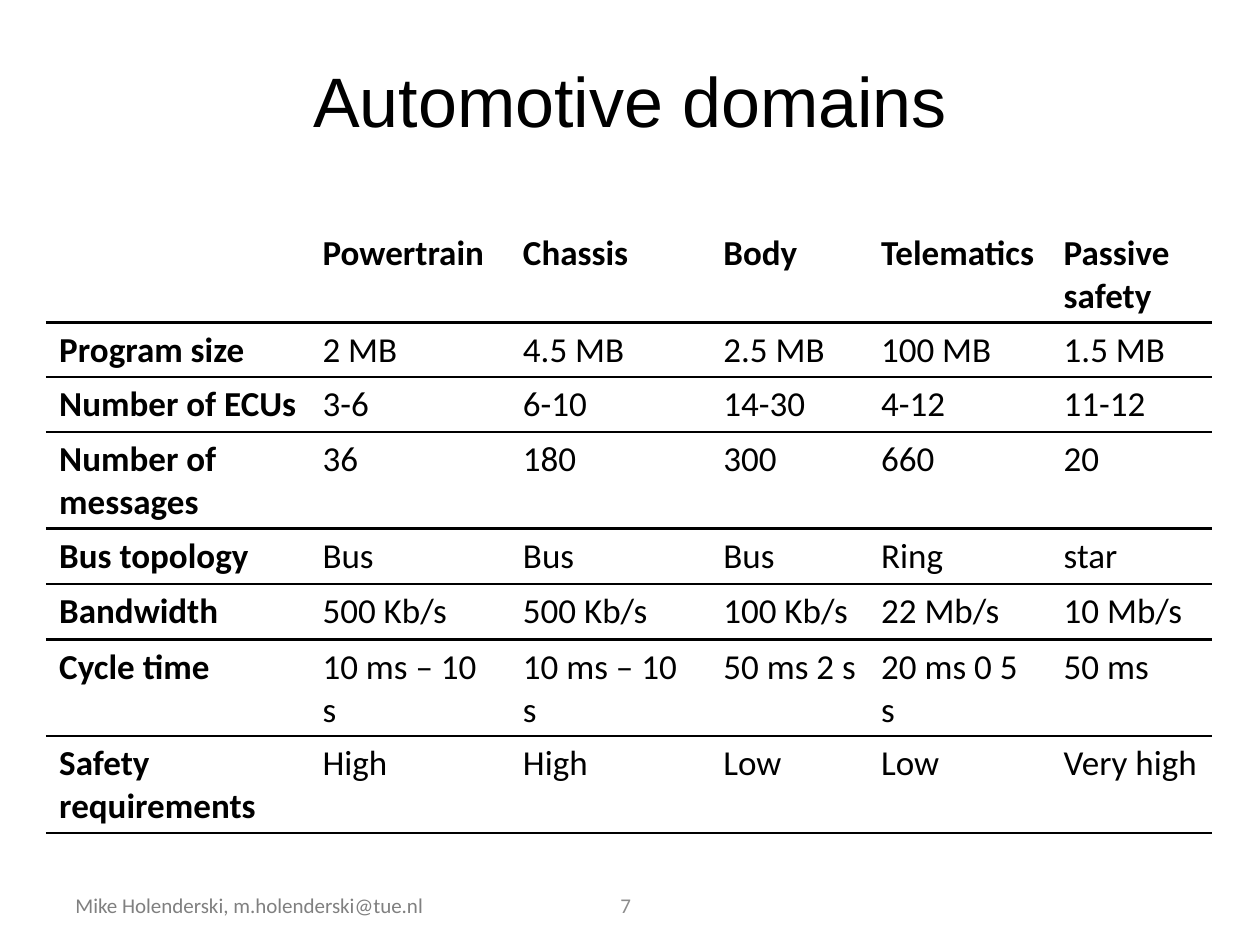
from lxml import etree
from pptx import Presentation
from pptx.dml.color import RGBColor
from pptx.enum.text import MSO_ANCHOR, PP_ALIGN
from pptx.oxml.ns import qn
from pptx.util import Cm, Pt

LEFT, CENTER = PP_ALIGN.LEFT, PP_ALIGN.CENTER
TOP, MIDDLE = MSO_ANCHOR.TOP, MSO_ANCHOR.MIDDLE
BLACK = RGBColor(0x00, 0x00, 0x00)
WHITE = RGBColor(0xFF, 0xFF, 0xFF)
FOOTER_GRAY = RGBColor(0x80, 0x80, 0x80)
NUMBER_GRAY = RGBColor(0x8C, 0x8C, 0x8C)


def write_text(frame, text, size=20, font="Calibri", color=BLACK, bold=False, align=LEFT):
    frame.word_wrap = True
    frame.text = text
    for paragraph in frame.paragraphs:
        paragraph.alignment = align
        paragraph.font.size = Pt(size)
        for run in paragraph.runs:
            run.font.name = font
            run.font.size = Pt(size)
            run.font.bold = bold
            run.font.color.rgb = color


def add_border(cell, side, color, width):
    line = etree.SubElement(cell._tc.get_or_add_tcPr(), qn("a:ln" + side), w=str(Pt(width)))
    fill = etree.SubElement(line, qn("a:solidFill"))
    etree.SubElement(fill, qn("a:srgbClr"), val=str(color))


prs = Presentation()
prs.slide_width, prs.slide_height = Cm(25.4), Cm(19.05)
slide = prs.slides.add_slide(prs.slide_layouts[5])

# Title
title = slide.shapes.title
title.left, title.top, title.width, title.height = Cm(1.27), Cm(0.76), Cm(22.86), Cm(2.49)
title.text_frame.vertical_anchor = MIDDLE
write_text(title.text_frame, "Automotive domains", size=40, font="Arial", align=CENTER)

# Footer: author and page number
footer_parts = [
    ("Mike Holenderski, m.holenderski@tue.nl", 1.27, 9.96, FOOTER_GRAY, LEFT, TOP),
    ("7", 11.23, 2.77, NUMBER_GRAY, CENTER, MIDDLE),
]
for text, left, width, color, align, anchor in footer_parts:
    footer = slide.shapes.add_textbox(Cm(left), Cm(17.86), Cm(width), Cm(0.76))
    footer.text_frame.vertical_anchor = anchor
    write_text(footer.text_frame, text, size=12, color=color, align=align)

# Domain comparison table
domain_rows = [
    ["", "Powertrain", "Chassis", "Body", "Telematics", "Passive\nsafety"],
    ["Program size", "2 MB", "4.5 MB", "2.5 MB", "100 MB", "1.5 MB"],
    ["Number of ECUs", "3-6", "6-10", "14-30", "4-12", "11-12"],
    ["Number of messages", "36", "180", "300", "660", "20"],
    ["Bus topology", "Bus", "Bus", "Bus", "Ring", "star"],
    ["Bandwidth", "500 Kb/s", "500 Kb/s", "100 Kb/s", "22 Mb/s", "10 Mb/s"],
    ["Cycle time", "10 ms – 10 s", "10 ms – 10 s", "50 ms 2 s", "20 ms 0 5 s", "50 ms"],
    ["Safety requirements", "High", "High", "Low", "Low", "Very high"],
]
column_widths = [5.31, 4.04, 4.04, 3.18, 3.68, 3.23]
row_heights = [1.12, 0.64, 0.99, 0.64, 1.12, 1.12, 1.12, 0.64]

domains_frame = slide.shapes.add_table(
    len(domain_rows), len(column_widths), Cm(0.94), Cm(4.55), Cm(23.48), Cm(11.43))
domains = domains_frame.table
domains.first_row = domains.horz_banding = False
for column, width in zip(domains.columns, column_widths):
    column.width = Cm(width)
for row, height in zip(domains.rows, row_heights):
    row.height = Cm(height)
domains_frame.height = Cm(11.43)

for r, values in enumerate(domain_rows):
    for c, value in enumerate(values):
        cell = domains.cell(r, c)
        write_text(cell.text_frame, value, bold=r == 0 or c == 0)
        # White sides, black rules between rows, no rule above the header
        add_border(cell, "L", WHITE, 1)
        add_border(cell, "R", WHITE, 1)
        if r == 0:
            add_border(cell, "T", WHITE, 1)
        else:
            add_border(cell, "T", BLACK, 1.5)
        add_border(cell, "B", BLACK, 1.5)
        cell.fill.solid()
        cell.fill.fore_color.rgb = WHITE

prs.save("out.pptx")
